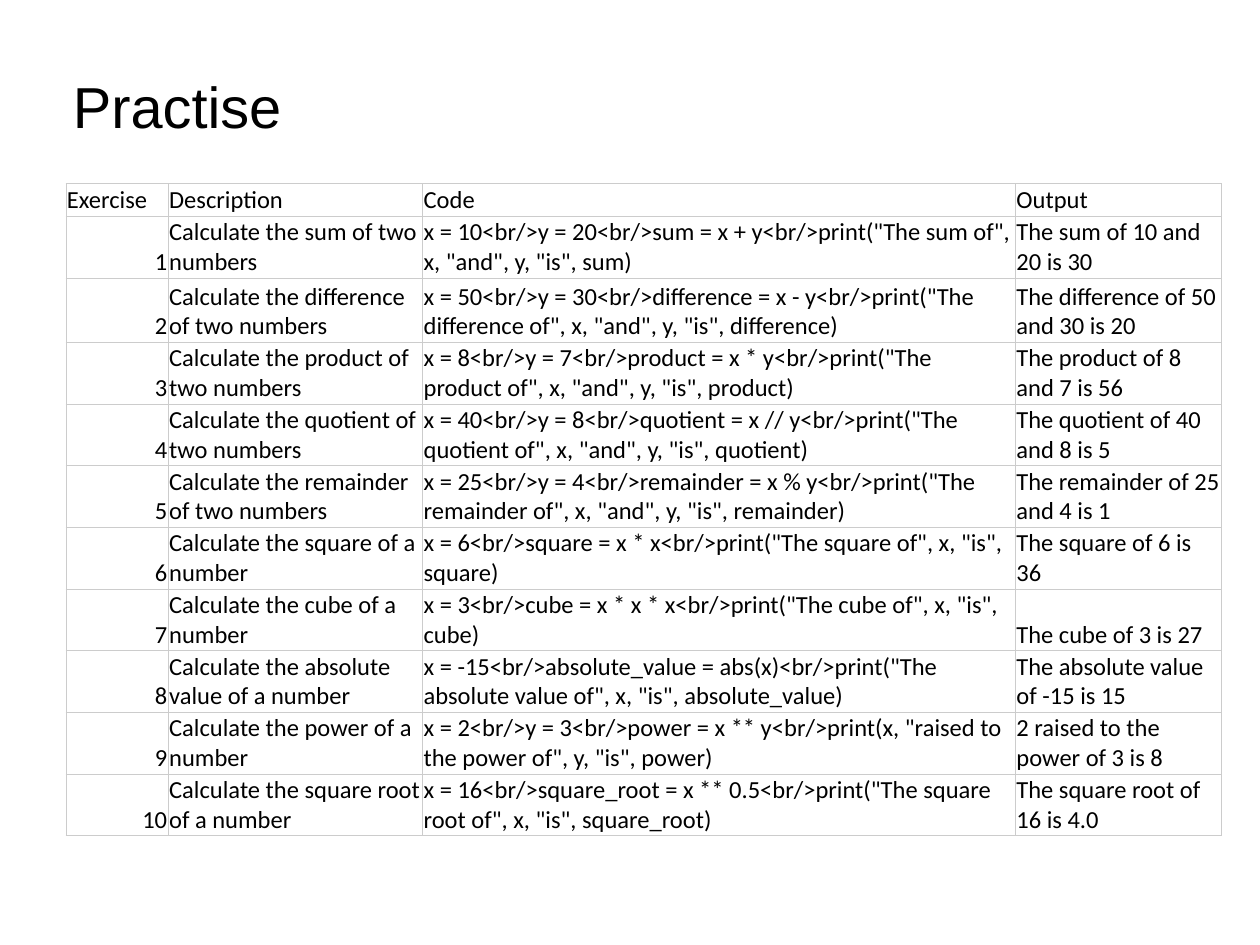
from lxml import etree
from pptx import Presentation
from pptx.dml.color import RGBColor
from pptx.enum.text import MSO_ANCHOR as Anchor, PP_ALIGN as Align
from pptx.oxml.ns import qn
from pptx.util import Cm, Pt

BLACK = RGBColor(0x00, 0x00, 0x00)
GRID_GREY = RGBColor(0xCC, 0xCC, 0xCC)

HEADINGS = ("Exercise", "Description", "Code", "Output")
EXERCISES = [
    ("Calculate the sum of two numbers",
     'x = 10<br/>y = 20<br/>sum = x + y<br/>print("The sum of", x, "and", y, "is", sum)',
     "The sum of 10 and 20 is 30"),
    ("Calculate the difference of two numbers",
     'x = 50<br/>y = 30<br/>difference = x - y<br/>print("The difference of", x, "and", y, "is", difference)',
     "The difference of 50 and 30 is 20"),
    ("Calculate the product of two numbers",
     'x = 8<br/>y = 7<br/>product = x * y<br/>print("The product of", x, "and", y, "is", product)',
     "The product of 8 and 7 is 56"),
    ("Calculate the quotient of two numbers",
     'x = 40<br/>y = 8<br/>quotient = x // y<br/>print("The quotient of", x, "and", y, "is", quotient)',
     "The quotient of 40 and 8 is 5"),
    ("Calculate the remainder of two numbers",
     'x = 25<br/>y = 4<br/>remainder = x % y<br/>print("The remainder of", x, "and", y, "is", remainder)',
     "The remainder of 25 and 4 is 1"),
    ("Calculate the square of a number",
     'x = 6<br/>square = x * x<br/>print("The square of", x, "is", square)',
     "The square of 6 is 36"),
    ("Calculate the cube of a number",
     'x = 3<br/>cube = x * x * x<br/>print("The cube of", x, "is", cube)',
     "The cube of 3 is 27"),
    ("Calculate the absolute value of a number",
     'x = -15<br/>absolute_value = abs(x)<br/>print("The absolute value of", x, "is", absolute_value)',
     "The absolute value of -15 is 15"),
    ("Calculate the power of a number",
     'x = 2<br/>y = 3<br/>power = x ** y<br/>print(x, "raised to the power of", y, "is", power)',
     "2 raised to the power of 3 is 8"),
    ("Calculate the square root of a number",
     'x = 16<br/>square_root = x ** 0.5<br/>print("The square root of", x, "is", square_root)',
     "The square root of 16 is 4.0"),
]
COLUMN_WIDTHS = (2.06, 5.13, 11.95, 4.15)
ROW_HEIGHTS = [0.66, 0.99, 1.3] + [0.99] * 8


def add_run(paragraph, text, font_name, size):
    run = paragraph.add_run()
    run.text = text
    run.font.name = font_name
    run.font.size = Pt(size)
    run.font.color.rgb = BLACK


def add_borders(cell):
    """Draw a thin grey line on all four sides of the cell."""
    properties = cell._tc.get_or_add_tcPr()
    for position, side in enumerate(("a:lnL", "a:lnR", "a:lnT", "a:lnB")):
        line = etree.Element(qn(side), w=str(Pt(0.38)))
        fill = etree.SubElement(line, qn("a:solidFill"))
        etree.SubElement(fill, qn("a:srgbClr"), val=str(GRID_GREY))
        properties.insert(position, line)


presentation = Presentation()
presentation.slide_width = Cm(25.4)
presentation.slide_height = Cm(19.05)
slide = presentation.slides.add_slide(presentation.slide_layouts[6])

exercise_table = slide.shapes.add_table(
    len(ROW_HEIGHTS), len(COLUMN_WIDTHS), Cm(1.33), Cm(3.7),
    Cm(sum(COLUMN_WIDTHS)), Cm(sum(ROW_HEIGHTS))).table
exercise_table.first_row = False
exercise_table.horz_banding = False
for column, width in zip(exercise_table.columns, COLUMN_WIDTHS):
    column.width = Cm(width)
for row, height in zip(exercise_table.rows, ROW_HEIGHTS):
    row.height = Cm(height)

numbered = [(str(number), *exercise) for number, exercise in enumerate(EXERCISES, 1)]
for row_index, entries in enumerate([HEADINGS, *numbered]):
    for column_index, entry in enumerate(entries):
        cell = exercise_table.cell(row_index, column_index)
        cell.margin_left = cell.margin_right = Cm(0.02)
        cell.margin_top = cell.margin_bottom = Cm(0.02)
        cell.vertical_anchor = Anchor.BOTTOM
        cell.fill.background()
        add_borders(cell)
        paragraph = cell.text_frame.paragraphs[0]
        if row_index > 0 and column_index == 0:
            paragraph.alignment = Align.RIGHT
        add_run(paragraph, entry, "Calibri", 14)

title = slide.shapes.add_textbox(Cm(1.22), Cm(0.53), Cm(22.86), Cm(3.18)).text_frame
title.word_wrap = True
title.vertical_anchor = Anchor.MIDDLE
add_run(title.paragraphs[0], "Practise", "Arial", 33)

presentation.save("out.pptx")
